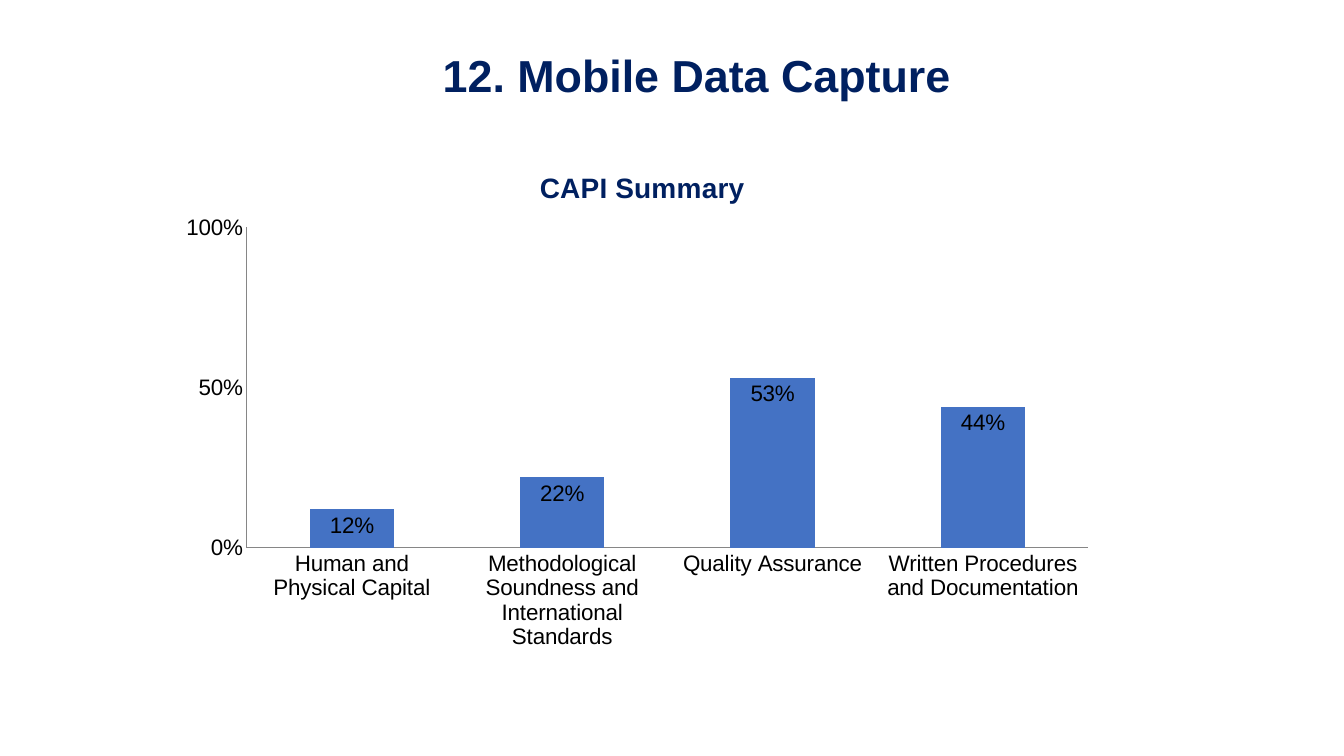
import pptx
import pptx.chart.data
import pptx.dml.color
import pptx.enum.chart
import pptx.enum.text
import pptx.oxml
import pptx.oxml.ns
import pptx.util

HEADING = "12. Mobile Data Capture"
CHART_TITLE = "CAPI Summary"
SERIES_NAME = "Series 1"
SCORES = {
    "Human and Physical Capital": 0.12,
    "Methodological Soundness and International Standards": 0.22,
    "Quality Assurance": 0.53,
    "Written Procedures and Documentation": 0.44,
}

# left, top, width, height in px
PAGE_SIZE = (1344, 756)
HEADING_BOX = (168, 15, 1058, 126)
CHART_BOX = (168, 141, 938, 519)
PLOT_BOX = (247, 227, 841, 321)
CHART_TITLE_CORNER = (535, 165)

EMU_PER_PX = 914400 / 100.8
FONT = "Arial"
PERCENT = "0%"
NAVY = pptx.dml.color.RGBColor(0x00, 0x20, 0x60)
BLUE = pptx.dml.color.RGBColor(0x44, 0x72, 0xC4)
BLACK = pptx.dml.color.RGBColor(0x00, 0x00, 0x00)
GREY = pptx.dml.color.RGBColor(0x86, 0x86, 0x86)


def emu(lengths):
    return [round(length * EMU_PER_PX) for length in lengths]


def style_font(font, size, color, bold):
    font.name = FONT
    font.size = pptx.util.Pt(size)
    font.color.rgb = color
    font.bold = bold


def add_span(para, text, size):
    span = para.add_run()
    span.text = text
    style_font(span.font, size, NAVY, True)


def place_in_chart(element, position, before, target=None):
    """Fix a chart part at a px position, given as fractions of the chart."""
    left, top, width, height = CHART_BOX
    fractions = {"x": (position[0] - left) / width, "y": (position[1] - top) / height}
    if len(position) == 4:
        fractions.update(w=position[2] / width, h=position[3] / height)
    parts = f'<c:layoutTarget val="{target}"/>' if target else ""
    parts += '<c:xMode val="edge"/><c:yMode val="edge"/>'
    parts += "".join(f'<c:{key} val="{value:.3f}"/>' for key, value in fractions.items())
    layout = pptx.oxml.parse_xml(
        f'<c:layout {pptx.oxml.ns.nsdecls("c")}><c:manualLayout>{parts}'
        "</c:manualLayout></c:layout>"
    )
    for old in element.findall(pptx.oxml.ns.qn("c:layout")):
        element.remove(old)
    element.find(pptx.oxml.ns.qn(before)).addprevious(layout)


def add_heading(page):
    frame = page.shapes.add_textbox(*emu(HEADING_BOX)).text_frame
    frame.word_wrap = True
    frame.vertical_anchor = pptx.enum.text.MSO_ANCHOR.MIDDLE
    para = frame.paragraphs[0]
    para.alignment = pptx.enum.text.PP_ALIGN.CENTER
    para.line_spacing = 0.9
    add_span(para, HEADING, 32)


def add_summary_chart(page):
    data = pptx.chart.data.CategoryChartData(number_format=PERCENT)
    data.categories = list(SCORES)
    data.add_series(SERIES_NAME, list(SCORES.values()))
    kind = pptx.enum.chart.XL_CHART_TYPE.COLUMN_CLUSTERED
    chart = page.shapes.add_chart(kind, *emu(CHART_BOX), data).chart
    style_font(chart.font, 16, BLACK, False)
    chart.has_legend = False

    chart.has_title = True
    add_span(chart.chart_title.text_frame.paragraphs[0], CHART_TITLE, 20)
    chart.chart_title.include_in_layout = False

    for axis in (chart.category_axis, chart.value_axis):
        axis.has_major_gridlines = False
        axis.major_tick_mark = pptx.enum.chart.XL_TICK_MARK.NONE
        axis.minor_tick_mark = pptx.enum.chart.XL_TICK_MARK.NONE
        axis.format.line.color.rgb = GREY
        axis.format.line.width = pptx.util.Pt(0.75)
    scale = chart.value_axis
    scale.minimum_scale, scale.maximum_scale, scale.major_unit = 0, 1, 0.5
    scale.tick_labels.number_format = PERCENT
    scale.tick_labels.number_format_is_linked = False

    plot = chart.plots[0]
    plot.gap_width = 150
    plot.vary_by_categories = False
    bars = plot.series[0]
    bars.format.fill.solid()
    bars.format.fill.fore_color.rgb = BLUE
    labels = bars.data_labels
    labels.show_value = True
    labels.number_format = PERCENT
    labels.number_format_is_linked = False
    labels.position = pptx.enum.chart.XL_LABEL_POSITION.INSIDE_END

    title, = chart.element.xpath("c:chart/c:title")
    place_in_chart(title, CHART_TITLE_CORNER, "c:overlay")
    area, = chart.element.xpath("c:chart/c:plotArea")
    place_in_chart(area, PLOT_BOX, "c:barChart", "inner")


def main():
    deck = pptx.Presentation()
    deck.slide_width, deck.slide_height = emu(PAGE_SIZE)
    page = deck.slides.add_slide(deck.slide_layouts[6])
    add_heading(page)
    add_summary_chart(page)
    deck.save("out.pptx")


if __name__ == "__main__":
    main()
